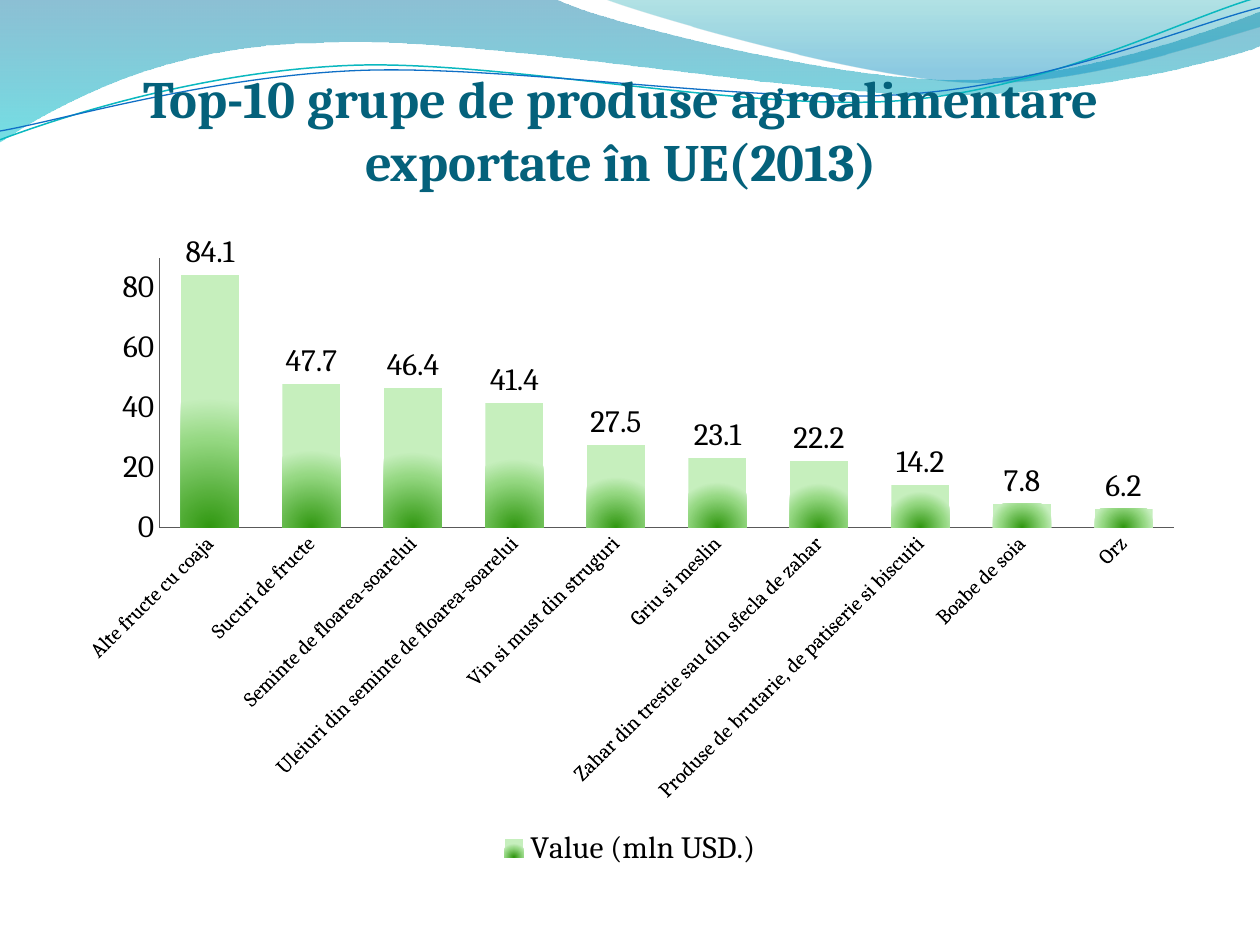
from math import cos, radians, sin

from lxml.etree import SubElement
from pptx import Presentation
from pptx.chart.data import CategoryChartData
from pptx.dml.color import RGBColor
from pptx.enum.chart import XL_CHART_TYPE, XL_LABEL_POSITION, XL_LEGEND_POSITION, XL_TICK_MARK
from pptx.enum.text import MSO_ANCHOR, PP_ALIGN
from pptx.oxml.ns import qn
from pptx.util import Inches, Pt

THEME = {
    "font": "Cambria", "head": "04617B", "ink": "000000", "axis": "595959",
    "big": Pt(30), "mid": Pt(18), "small": Pt(12), "hair": Pt(0.75),
    "sea": [(0, "0074A1", 45), (100, "00C6CF", 55)],
    "sky": [(0, "00A1A9", 30), (80, "008BBF", 45)],
    "bar": [(0, "319811", 100), (68, "95D882", 100), (100, "C6EFBD", 100)],
    "teal": "0AB8BF", "blue": "0F6FC6",
}


def paint(fill, stops, way, **keys):
    """Fill with gradient stops (position, colour, opacity in %); way is 'lin' or 'path'."""
    fill.gradient()
    grad = fill._xPr.find(qn("a:gradFill"))
    for old in list(grad):
        grad.remove(old)
    row = SubElement(grad, qn("a:gsLst"))
    for pos, color, alpha in stops:
        stop = SubElement(row, qn("a:gs"), pos=str(pos * 1000))
        tone = SubElement(stop, qn("a:srgbClr"), val=color)
        if alpha < 100:
            SubElement(tone, qn("a:alpha"), val=str(alpha * 1000))
    return SubElement(grad, qn("a:" + way), **keys)


def bend(shape, box, turn, start, parts, shut):
    """Give a freeform a box, a turn and an outline of lines (2 numbers) and curves (6)."""
    left, top, width, height = box
    for key, val in zip(("left", "top", "width", "height"), box):
        setattr(shape, key, Inches(val))
    shape.rotation = turn
    mid_x, mid_y, arc = left + width / 2, top + height / 2, radians(-turn)
    track = shape._element.spPr.find(".//" + qn("a:path"))
    for old in list(track):
        track.remove(old)
    track.set("w", str(Inches(width)))
    track.set("h", str(Inches(height)))
    for n, part in enumerate([start, *parts]):
        kind = "moveTo" if n == 0 else "lnTo" if len(part) == 2 else "cubicBezTo"
        step = SubElement(track, qn("a:" + kind))
        for x, y in zip(part[::2], part[1::2]):
            dx, dy = x - mid_x, y - mid_y
            SubElement(step, qn("a:pt"),
                       x=str(Inches(dx * cos(arc) - dy * sin(arc) + width / 2)),
                       y=str(Inches(dx * sin(arc) + dy * cos(arc) + height / 2)))
    if shut:
        SubElement(track, qn("a:close"))


deck = Presentation()
deck.slide_width, deck.slide_height = Inches(10), Inches(7.5)
wide, high = deck.slide_width, deck.slide_height
slide = deck.slides.add_slide(deck.slide_layouts[5])

# Waves across the top of the master: box, turn, start, parts, tone, line width
waves = [
    ((-0.01, -0.01, 10.02, 1.14), 0, (0, -0.01),
     [(4.4, -0.01), (4.76, 0.17, 6.64, 0.63, 7.58, 0.63), (8.53, 0.63, 9.58, 0.26, 10, 0.09),
      (10.01, 0.36), (9.83, 0.44, 8.7, 0.76, 7.46, 0.75), (6.22, 0.75, 3.82, 0.28, 2.57, 0.34),
      (1.29, 0.35, 0.46, 0.83, -0.01, 1.13), (0, -0.01)], "sea", None),
    ((4.79, -0.01, 5.21, 0.7), 0, (4.79, -0.01),
     [(5.09, 0.11, 6.82, 0.62, 7.69, 0.65), (8.56, 0.69, 9.61, 0.32, 10, 0.21),
      (10, 0), (4.79, -0.01)], "sky", None),
    ((-0.02, 0.22, 10.02, 0.71), 357.3, (0, 1.11),
     [(0.48, 0.93, 1.58, 0.57, 2.77, 0.52), (3.95, 0.47, 5.93, 0.89, 7.13, 0.8),
      (8.33, 0.71, 9.38, 0.15, 9.98, -0.02)], "teal", 0.85),
    ((-0.02, 0.3, 10.03, 0.58), 357.3, (0, 1.04),
     [(0.47, 0.96, 1.64, 0.61, 2.83, 0.56), (4.03, 0.51, 5.97, 0.83, 7.17, 0.75),
      (8.36, 0.67, 9.41, 0.21, 10, 0.06)], "blue", 0.75),
]
for box, turn, start, parts, tone, width in waves:
    pen = slide.shapes.build_freeform()
    pen.add_line_segments([(wide, high)], close=False)
    wave = pen.convert_to_shape()
    bend(wave, box, turn, start, parts, width is None)
    wave.shadow.inherit = False
    if width:
        wave.fill.background()
        wave.line.color.rgb = RGBColor.from_string(THEME[tone])
        wave.line.width = Pt(width)
    else:
        paint(wave.fill, THEME[tone], "lin", ang="5400000", scaled="1")
        wave.line.fill.background()
    deck.slide_master.shapes._spTree.append(wave._element)

# Title
title = slide.shapes.title
place = {"left": int(wide * 0.043), "top": int(high * 0.037),
         "width": int(wide * 0.9), "height": int(high / 6)}
for key, val in place.items():
    setattr(title, key, val)
frame = title.text_frame
frame.text = "Top-10 grupe de produse agroalimentare exportate în UE(2013)"
form = {"word_wrap": True, "vertical_anchor": MSO_ANCHOR.BOTTOM, "margin_left": 0,
        "margin_right": 0, "margin_top": Inches(0.05), "margin_bottom": 0}
for key, val in form.items():
    setattr(frame, key, val)
para = frame.paragraphs[0]
para.alignment = PP_ALIGN.CENTER
font = para.runs[0].font
for key, val in {"name": THEME["font"], "size": THEME["big"], "bold": True}.items():
    setattr(font, key, val)
font.color.rgb = RGBColor.from_string(THEME["head"])

# Chart
sales = {
    "Alte fructe cu coaja": 84.1,
    "Sucuri de fructe": 47.7,
    "Seminte de floarea-soarelui": 46.4,
    "Uleiuri din seminte de floarea-soarelui": 41.4,
    "Vin si must din struguri": 27.5,
    "Griu si meslin": 23.1,
    "Zahar din trestie sau din sfecla de zahar": 22.2,
    "Produse de brutarie, de patiserie si biscuiti": 14.2,
    "Boabe de soia": 7.8,
    "Orz": 6.2,
}
data = CategoryChartData()
data.categories = list(sales)
data.add_series("Value (mln USD.)", list(sales.values()))
chart = slide.shapes.add_chart(
    XL_CHART_TYPE.COLUMN_CLUSTERED, int(wide * 0.05), int(high * 0.248),
    int(wide * 0.9), int(high * 0.675), data).chart
chart.has_title = False
chart.font.name, chart.font.size = THEME["font"], THEME["mid"]
chart.font.color.rgb = RGBColor.from_string(THEME["ink"])
chart.has_legend = True
chart.legend.position = XL_LEGEND_POSITION.BOTTOM
chart.legend.include_in_layout = False

for axis in (chart.category_axis, chart.value_axis):
    axis.has_major_gridlines = False
    axis.major_tick_mark = axis.minor_tick_mark = XL_TICK_MARK.NONE
    axis.format.line.color.rgb = RGBColor.from_string(THEME["axis"])
    axis.format.line.width = THEME["hair"]
chart.category_axis.tick_labels.font.size = THEME["small"]

plot = chart.plots[0]
plot.gap_width, plot.vary_by_categories = 75, False
plot.has_data_labels = True
for key, val in {"show_value": True, "position": XL_LABEL_POSITION.OUTSIDE_END}.items():
    setattr(plot.data_labels, key, val)
glow = paint(plot.series[0].format.fill, THEME["bar"], "path", path="circle")
SubElement(glow, qn("a:fillToRect"), l="50000", t="130000", r="50000", b="-30000")

deck.save("out.pptx")
